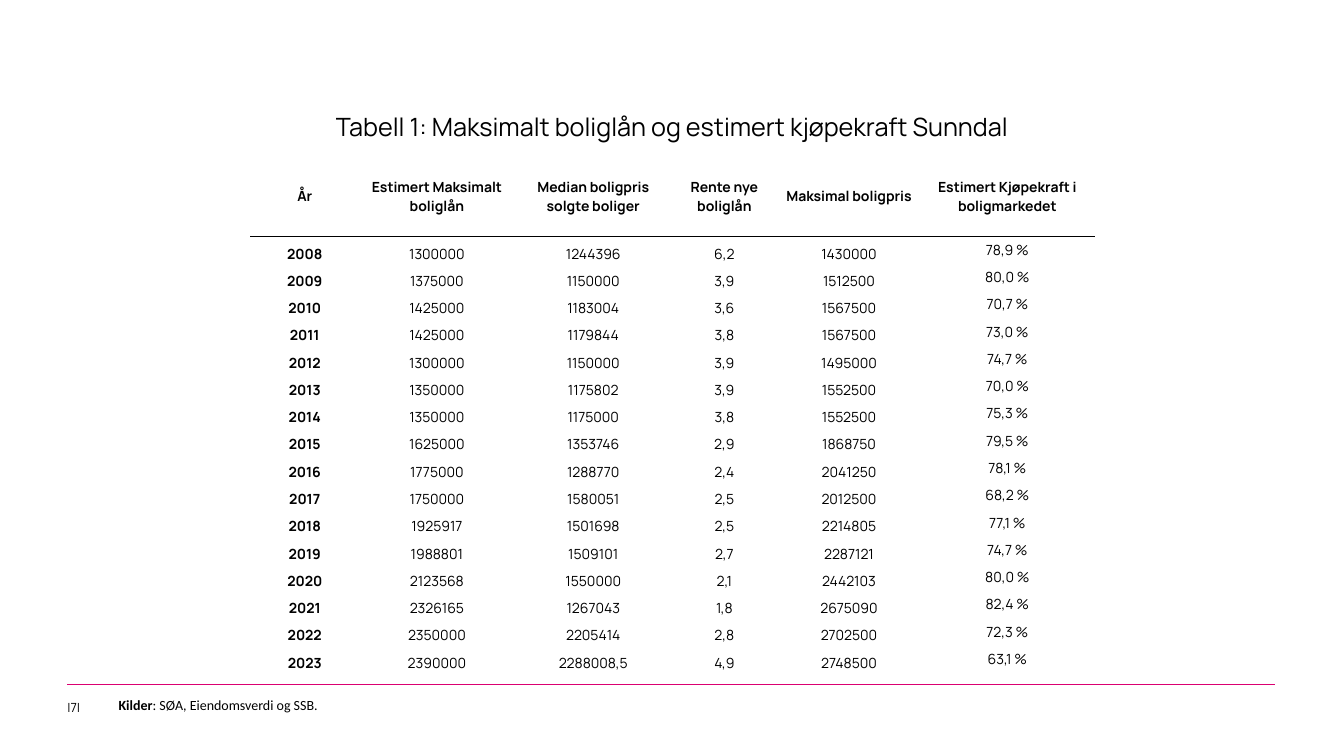
"""Build the slide with the table of maximum mortgages and purchasing power in Sunndal."""
from dataclasses import dataclass
from typing import NamedTuple

from lxml.etree import SubElement
from pptx import Presentation
from pptx.dml.color import RGBColor
from pptx.enum.shapes import MSO_CONNECTOR
from pptx.enum.text import MSO_ANCHOR as Anchor, MSO_AUTO_SIZE as AutoSize, PP_ALIGN as Align
from pptx.oxml import parse_xml
from pptx.oxml.ns import nsdecls, qn
from pptx.util import Cm, Pt

BLACK = RGBColor(0x00, 0x00, 0x00)
WHITE = RGBColor(0xFF, 0xFF, 0xFF)
MAGENTA = RGBColor(0xDB, 0x00, 0x71)
HEADING_FONT = "Manrope"
SOURCE_FONT = "Calibri"
TABLE_LEFT, TABLE_TOP = Cm(6.32), Cm(3.94)
HEADER_HEIGHT, BODY_HEIGHT = Cm(2.01), Cm(11)


@dataclass(frozen=True)
class Column:
    heading: str
    width: float
    bold: bool = False
    anchor: Anchor = Anchor.BOTTOM


class Year(NamedTuple):
    year: str
    loan: str
    median_price: str
    rate: str
    maximum_price: str
    purchasing_power: str


@dataclass(frozen=True)
class Span:
    text: str
    bold: bool = False


@dataclass(frozen=True)
class Label:
    spans: tuple[Span, ...]
    left: float
    top: float
    width: float
    height: float
    size: float
    font: str


COLUMNS = (
    Column("År", 2.72, bold=True),
    Column("Estimert Maksimalt boliglån", 3.94),
    Column("Median boligpris solgte boliger", 3.94),
    Column("Rente nye boliglån", 2.67),
    Column("Maksimal boligpris", 3.61),
    Column("Estimert Kjøpekraft i boligmarkedet", 4.37, anchor=Anchor.MIDDLE),
)
YEARS = (
    Year("2008", "1300000", "1244396", "6,2", "1430000", "78,9 %"),
    Year("2009", "1375000", "1150000", "3,9", "1512500", "80,0 %"),
    Year("2010", "1425000", "1183004", "3,6", "1567500", "70,7 %"),
    Year("2011", "1425000", "1179844", "3,8", "1567500", "73,0 %"),
    Year("2012", "1300000", "1150000", "3,9", "1495000", "74,7 %"),
    Year("2013", "1350000", "1175802", "3,9", "1552500", "70,0 %"),
    Year("2014", "1350000", "1175000", "3,8", "1552500", "75,3 %"),
    Year("2015", "1625000", "1353746", "2,9", "1868750", "79,5 %"),
    Year("2016", "1775000", "1288770", "2,4", "2041250", "78,1 %"),
    Year("2017", "1750000", "1580051", "2,5", "2012500", "68,2 %"),
    Year("2018", "1925917", "1501698", "2,5", "2214805", "77,1 %"),
    Year("2019", "1988801", "1509101", "2,7", "2287121", "74,7 %"),
    Year("2020", "2123568", "1550000", "2,1", "2442103", "80,0 %"),
    Year("2021", "2326165", "1267043", "1,8", "2675090", "82,4 %"),
    Year("2022", "2350000", "2205414", "2,8", "2702500", "72,3 %"),
    Year("2023", "2390000", "2288008,5", "4,9", "2748500", "63,1 %"),
)
LABELS = (
    Label((Span("Kilder", bold=True), Span(": SØA, Eiendomsverdi og SSB.")),
          2.74, 17.42, 29.39, 0.69, 10, SOURCE_FONT),
    Label((Span("|7|"),), 1.45, 17.5, 1.3, 0.65, 9, HEADING_FONT),
)


def format_font(font, name: str, size: float, bold: bool = False) -> None:
    font.name, font.size, font.bold = name, Pt(size), bold
    font.color.rgb = BLACK


def draw_title(page) -> None:
    title = page.shapes.title
    title.left, title.top, title.width, title.height = Cm(0), Cm(2.69), Cm(33.87), Cm(1.02)
    frame = title.text_frame
    frame.text = "Tabell 1: Maksimalt boliglån og estimert kjøpekraft Sunndal"
    frame.auto_size, frame.vertical_anchor = AutoSize.NONE, Anchor.TOP
    para = frame.paragraphs[0]
    para.alignment = Align.CENTER
    format_font(para.runs[0].font, HEADING_FONT, 18)


def draw_footer_rule(page) -> None:
    rule = page.shapes.add_connector(
        MSO_CONNECTOR.STRAIGHT, Cm(1.7), Cm(17.25), Cm(32.13), Cm(17.25))
    rule.line.color.rgb, rule.line.width = MAGENTA, Pt(0.5)
    SubElement(rule._element.spPr, qn("a:effectLst"))


def draw_label(page, label: Label) -> None:
    box = page.shapes.add_textbox(
        Cm(label.left), Cm(label.top), Cm(label.width), Cm(label.height))
    box.text_frame.word_wrap = True
    para = box.text_frame.paragraphs[0]
    for span in label.spans:
        run = para.add_run()
        run.text = span.text
        format_font(run.font, label.font, label.size, span.bold)


def add_border(cell, side: str) -> None:
    border = parse_xml(
        f'<a:{side} {nsdecls("a")} w="{Pt(0.5)}"><a:solidFill>'
        f'<a:srgbClr val="{BLACK}"/></a:solidFill></a:{side}>')
    cell._tc.get_or_add_tcPr().insert(0, border)


def fill_cell(cell, text: str, bold: bool, anchor: Anchor) -> None:
    cell.fill.solid()
    cell.fill.fore_color.rgb = WHITE
    cell.margin_left = cell.margin_right = cell.margin_top = Cm(0.02)
    cell.margin_bottom = Cm(0)
    cell.vertical_anchor = anchor
    cell.text_frame.text = text
    para = cell.text_frame.paragraphs[0]
    para.alignment = Align.CENTER
    format_font(para.runs[0].font, HEADING_FONT, 10, bold)


def draw_table(page) -> None:
    width = Cm(sum(column.width for column in COLUMNS))
    table = page.shapes.add_table(
        len(YEARS) + 1, len(COLUMNS), TABLE_LEFT, TABLE_TOP,
        width, HEADER_HEIGHT + BODY_HEIGHT).table
    table.first_row = table.horz_banding = False
    table.rows[0].height = HEADER_HEIGHT
    for row_number in range(1, len(YEARS) + 1):
        table.rows[row_number].height = BODY_HEIGHT // len(YEARS)
    for index, column in enumerate(COLUMNS):
        table.columns[index].width = Cm(column.width)
        fill_cell(table.cell(0, index), column.heading, True, Anchor.MIDDLE)
        for row_number, year in enumerate(YEARS, start=1):
            fill_cell(table.cell(row_number, index), year[index], column.bold, column.anchor)
        add_border(table.cell(0, index), "lnB")
        add_border(table.cell(1, index), "lnT")


def main() -> None:
    deck = Presentation()
    deck.slide_width, deck.slide_height = Cm(33.87), Cm(19.05)
    page = deck.slides.add_slide(deck.slide_layouts[5])
    draw_title(page)
    draw_footer_rule(page)
    for label in LABELS:
        draw_label(page, label)
    draw_table(page)
    deck.save("out.pptx")


if __name__ == "__main__":
    main()
